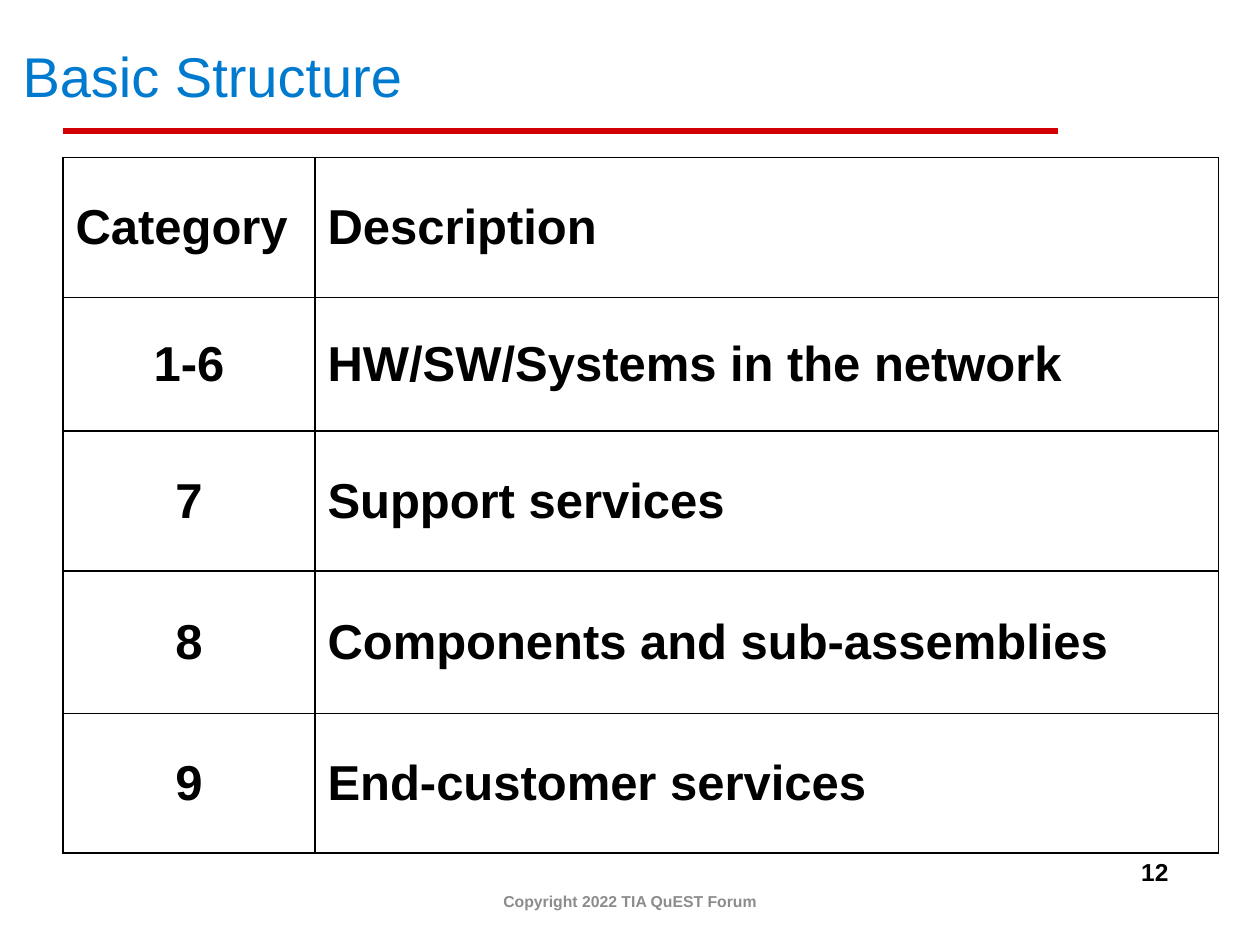
from lxml import etree
from pptx import Presentation
from pptx.dml.color import RGBColor
from pptx.enum.shapes import MSO_CONNECTOR
from pptx.enum.text import MSO_ANCHOR, MSO_AUTO_SIZE, PP_ALIGN
from pptx.oxml import parse_xml
from pptx.oxml.ns import nsdecls, qn
from pptx.util import Cm, Pt

COLORS = {"title": "007ACF", "rule": "D20000", "text": "000000", "foot": "8C8C8C"}
ROWS = [
    ("Category", "Description"),
    ("1-6", "HW/SW/Systems in the network"),
    ("7", "Support services"),
    ("8", "Components and sub-assemblies"),
    ("9", "End-customer services"),
]
WIDTHS = (5.08, 18.21)
HEIGHTS = (2.82, 2.69, 2.82, 2.87, 2.82)


def place(shape, box):
    shape.left, shape.top, shape.width, shape.height = map(Cm, box)


def write(frame, text, size, color, bold=False, align=PP_ALIGN.LEFT):
    para = frame.paragraphs[0]
    para.alignment = align
    run = para.add_run()
    run.text = text
    font = run.font
    font.name, font.size, font.bold = "Arial", Pt(size), bold
    font.color.rgb = RGBColor.from_string(COLORS[color])
    return para


def add_head(slide, box):
    """Title with a red rule below it."""
    left, top, width, height = box
    title = slide.shapes.title
    place(title, box)
    frame = title.text_frame
    frame.auto_size = MSO_AUTO_SIZE.NONE
    frame.vertical_anchor = MSO_ANCHOR.MIDDLE
    write(frame, "Basic Structure", 32, "title").line_spacing = 0.9

    start, level = left + 1.07, top + height - 0.13
    rule = slide.shapes.add_connector(
        MSO_CONNECTOR.STRAIGHT, Cm(start), Cm(level), Cm(start + 20.06), Cm(level))
    rule.line.color.rgb = RGBColor.from_string(COLORS["rule"])
    rule.line.width = Pt(3)
    etree.SubElement(rule._element.spPr, qn("a:effectLst"))


def add_edges(cell):
    """Thin black border on all four sides, placed ahead of the fill."""
    props = cell._tc.get_or_add_tcPr()
    for spot, side in enumerate(("lnL", "lnR", "lnT", "lnB")):
        props.insert(spot, parse_xml(
            f'<a:{side} {nsdecls("a")} w="12700"><a:solidFill>'
            f'<a:srgbClr val="{COLORS["text"]}"/></a:solidFill></a:{side}>'))


def add_grid(slide, box):
    """Table of categories and their descriptions."""
    table = slide.shapes.add_table(len(ROWS), len(WIDTHS), *map(Cm, box)).table
    table.first_row = table.horz_banding = False
    for col, width in zip(table.columns, WIDTHS):
        col.width = Cm(width)
    for r, (row, height) in enumerate(zip(ROWS, HEIGHTS)):
        table.rows[r].height = Cm(height)
        for c, text in enumerate(row):
            cell = table.cell(r, c)
            cell.fill.background()
            cell.vertical_anchor = MSO_ANCHOR.MIDDLE
            center = r > 0 and c == 0
            write(cell.text_frame, text, 28, "text", True,
                  PP_ALIGN.CENTER if center else PP_ALIGN.LEFT)
            add_edges(cell)


def add_note(slide, box, text, size, color, anchor):
    """Centred bold line at the foot of the slide."""
    frame = slide.shapes.add_textbox(*map(Cm, box)).text_frame
    frame.word_wrap = True
    frame.vertical_anchor = anchor
    write(frame, text, size, color, True, PP_ALIGN.CENTER)


def main():
    deck = Presentation()
    deck.slide_width, deck.slide_height = Cm(25.4), Cm(19.05)
    slide = deck.slides.add_slide(deck.slide_layouts[5])
    add_head(slide, (0.2, 0.43, 24.56, 2.34))
    add_note(slide, (8.41, 17.65, 8.58, 1.02), "Copyright 2022 TIA QuEST Forum",
             9, "foot", MSO_ANCHOR.MIDDLE)
    add_note(slide, (21.16, 17.15, 4.24, 0.86), "12", 14, "text", MSO_ANCHOR.TOP)
    add_grid(slide, (1.27, 3.18, sum(WIDTHS), sum(HEIGHTS)))
    deck.save("out.pptx")


if __name__ == "__main__":
    main()
